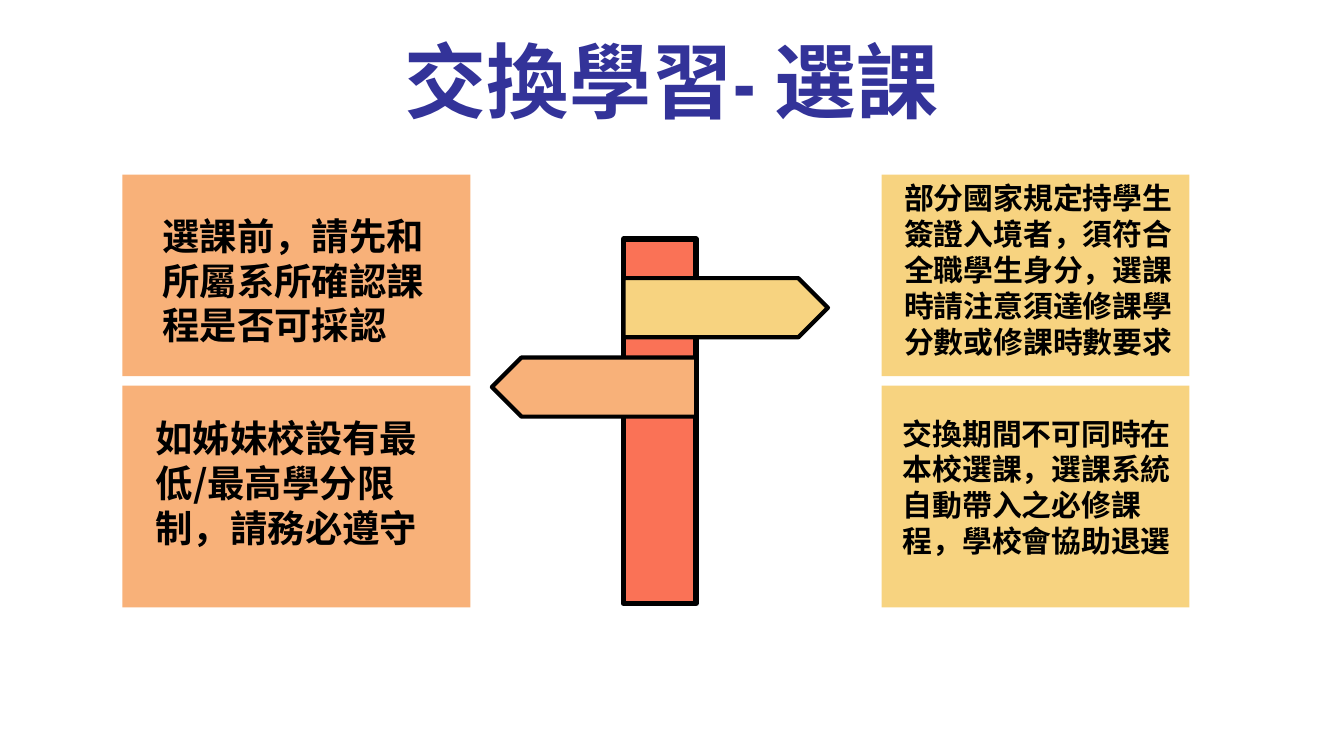
from pptx import Presentation
from pptx import util as u
from pptx.dml.color import RGBColor
from pptx.enum import shapes, text
from pptx.oxml.ns import qn
from lxml import etree

KIND = shapes.MSO_SHAPE
ANCHOR = text.MSO_ANCHOR
SANS = "Noto Sans CJK SC"
PEACH, SAND, CORAL = "F8B179", "F7D380", "FA7256"


def paint(hue):
    """Turn a hex string into a colour."""
    return RGBColor.from_string(hue)


def block(slide, kind, box, fill, line=0):
    """Draw a filled shape with an optional black outline."""
    shape = slide.shapes.add_shape(kind, *map(u.Inches, box))
    shape.shadow.inherit = False
    shape.fill.solid()
    shape.fill.fore_color.rgb = paint(fill)
    if line:
        shape.line.color.rgb = paint("000000")
        shape.line.width = u.Pt(line)
    else:
        shape.line.fill.background()
    return shape


def write(slide, box, runs, size, anchor, hue="000000", align=text.PP_ALIGN.LEFT):
    """Place one bold paragraph made of (words, font) runs."""
    frame = slide.shapes.add_textbox(*map(u.Inches, box)).text_frame
    frame.word_wrap = True
    frame.vertical_anchor = anchor
    frame.margin_left = frame.margin_right = u.Inches(0.1)
    frame.margin_top = frame.margin_bottom = u.Inches(0.1)
    para = frame.paragraphs[0]
    para.alignment = align
    para.line_spacing = u.Pt(size * 1.2)
    para._p.get_or_add_pPr().set("hangingPunct", "0")
    for words, face in runs:
        run = para.add_run()
        run.text = words
        font = run.font
        font.size, font.bold, font.name = u.Pt(size), True, face
        font.color.rgb = paint(hue)
        east = etree.SubElement(run._r.get_or_add_rPr(), qn("a:ea"))
        east.set("typeface", SANS)


def card(slide, box, fill, inner, words, size, anchor, face=SANS):
    """Draw a note card with its text box offset from the card's corner."""
    left, top, _, _ = box
    block(slide, KIND.RECTANGLE, box, fill)
    dx, dy, wide, high = inner
    write(slide, (left + dx, top + dy, wide, high), [(words, face)], size, anchor)


def sign(slide, box):
    """Draw a signpost with one arrow to each side."""
    left, top, wide, high = box
    post, arm, tall = 0.54, 1.52, 0.44
    block(slide, KIND.RECTANGLE, (left + arm - post, top, post, high), CORAL, 3)
    block(slide, KIND.PENTAGON, (left + wide - arm, top + 0.29, arm, tall), SAND, 2.25)
    back = block(slide, KIND.PENTAGON, (left, top + 0.88, arm, tall), PEACH, 2.25)
    back.rotation = 180


def main():
    """Build the slide and save it."""
    deck = Presentation()
    deck.slide_width, deck.slide_height = u.Inches(10), u.Inches(10 * 9 / 16)
    slide = deck.slides.add_slide(deck.slide_layouts[6])
    title = [("交換", "Arial"), ("學習- ", "Arial Narrow"), ("選課", "Arial")]
    write(slide, (0.5, 0.49, 9, 0.57), title, 44, ANCHOR.BOTTOM, "333399",
          text.PP_ALIGN.CENTER)
    west, east, wide, slim = 0.91, 6.56, 2.59, 2.29
    upper, lower = (1.3, 1.5), (2.87, 1.65)
    card(slide, (west, upper[0], wide, upper[1]), PEACH, (0.2, 0.37, 2.18, 0.83),
         "選課前，請先和所屬系所確認課程是否可採認", 20, ANCHOR.MIDDLE)
    card(slide, (west, lower[0], wide, lower[1]), PEACH, (0.15, 0.12, 2.34, 1.4),
         "如姊妹校設有最低/最高學分限制，請務必遵守", 20, ANCHOR.TOP)
    card(slide, (east, upper[0], slim, upper[1]), SAND, (0.07, 0.03, 2.27, 1.35),
         "部分國家規定持學生簽證入境者，須符合全職學生身分，選課時請注意須達修課學分數或修課時數要求",
         16, ANCHOR.MIDDLE, "Arial Narrow")
    card(slide, (east, lower[0], slim, lower[1]), SAND, (0.06, 0.12, 2.28, 1.47),
         "交換期間不可同時在本校選課，選課系統自動帶入之必修課程，學校會協助退選",
         16, ANCHOR.TOP)
    sign(slide, (3.66, 1.78, 2.5, 2.71))
    deck.save("out.pptx")


if __name__ == "__main__":
    main()
